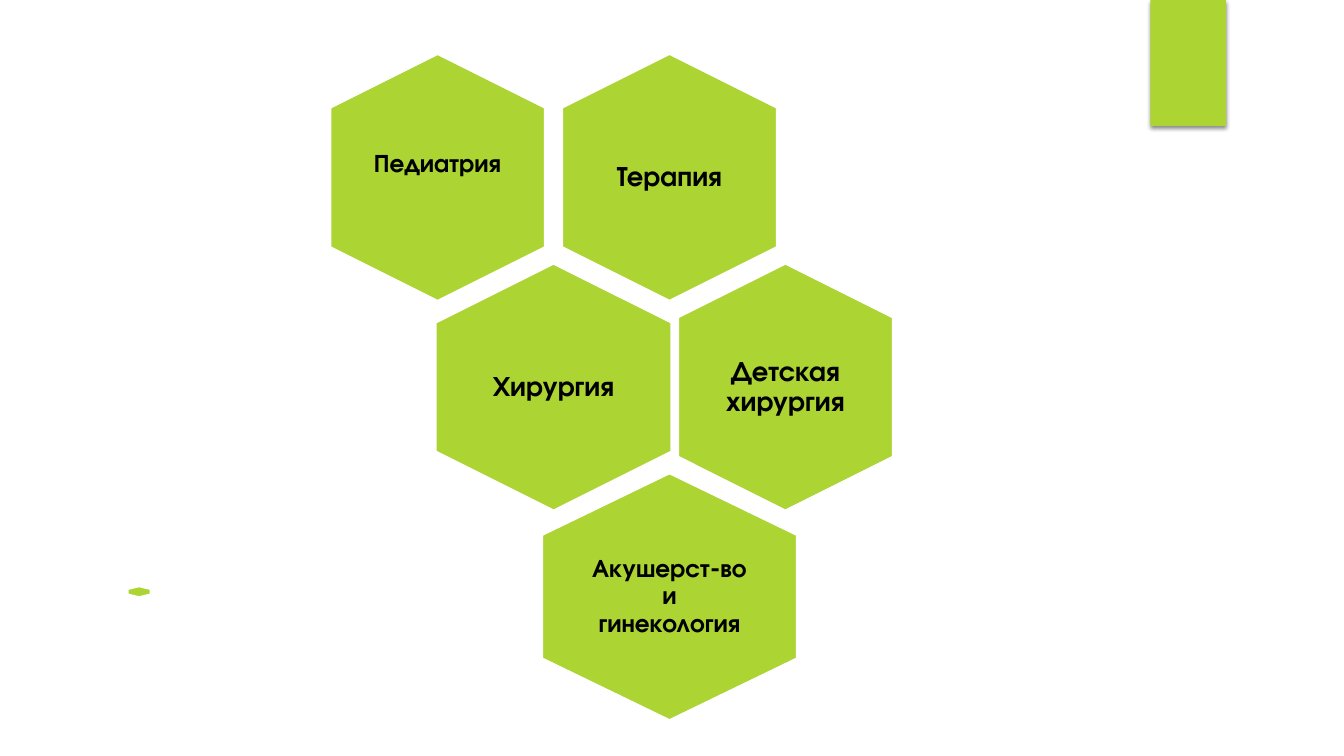
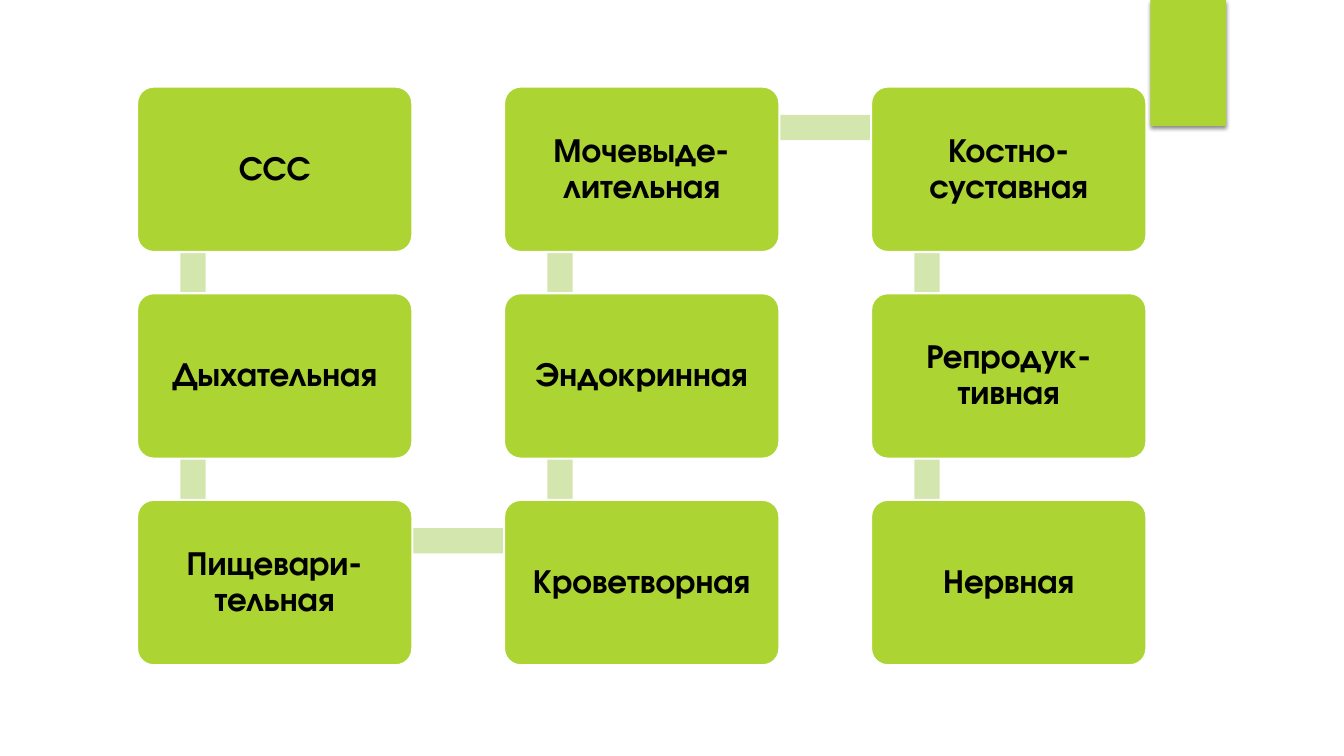
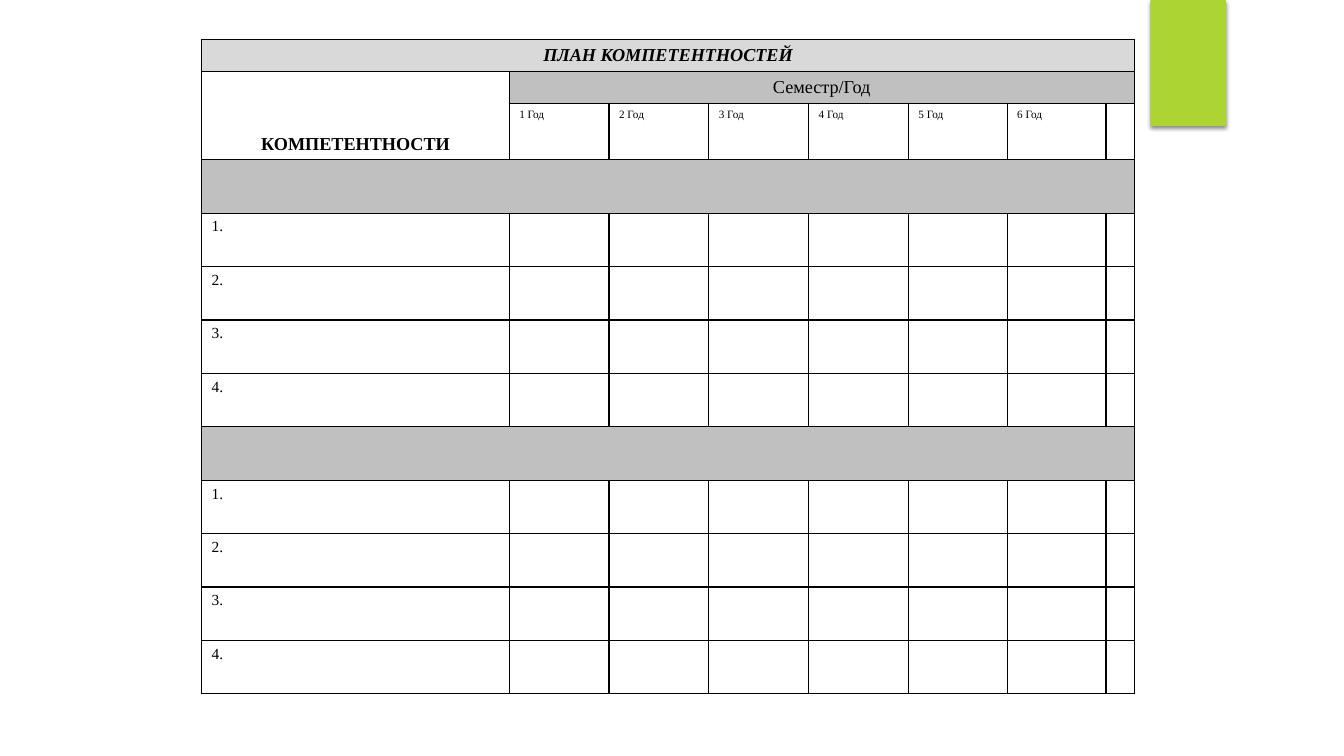
from lxml import etree
from pptx import Presentation
from pptx.dml.color import RGBColor as RGB
from pptx.enum.shapes import MSO_SHAPE as SHAPE
from pptx.enum.text import MSO_ANCHOR as ANCHOR, PP_ALIGN as ALIGN
from pptx.oxml import parse_xml
from pptx.oxml.ns import nsdecls, qn
from pptx.util import Inches, Pt

# Colours and fonts
LIME, PALE = RGB(0xAC, 0xD4, 0x33), RGB(0xD2, 0xE6, 0xAE)
WHITE, BLACK = RGB(255, 255, 255), RGB(0, 0, 0)
LIGHT, GREY = RGB(0xD9, 0xD9, 0xD9), RGB(0xC0, 0xC0, 0xC0)
SANS, SERIF = "TeX Gyre Adventor", "Times New Roman"

# Hexagons: text, half-steps across, row, breadth, size, inset, text box, lift
HEXES = [
    ("Терапия", 2, 0, 2.13, 20, 0.08, (1.47, 1.69), 0),
    ("Педиатрия", 0, 0, 2.13, 18, 0, (1.47, 1.69), 0.13),
    ("Хирургия", 1, 1, 2.34, 20, 0.08, (1.58, 1.65), 0),
    ("Детская хирургия", 3, 1, 2.13, 20, 0, (1.47, 1.69), 0),
    ("Акушерст-во и гинекология", 2, 2, 2.53, 18, 0.07, (1.69, 1.63), 0),
]

# Body systems, in the order of the chain
CHAIN = ["ССС", "Дыхательная", "Пищевари-тельная",
         "Кроветворная", "Эндокринная", "Мочевыде-лительная",
         "Костно-суставная", "Репродук-тивная", "Нервная"]

# Table
COLS = [3.05] + [0.99] * 4 + [0.98] * 2 + [0.28]
ROWS = [0.3, 0.3, 0.56] + [0.53] * 10
SPANS = [(0, 0, 0, 7), (1, 0, 2, 0), (1, 1, 1, 7), (3, 0, 3, 7), (8, 0, 8, 7)]
FILLS = {0: LIGHT, 3: GREY, 8: GREY}
HEADS = [
    (0, 0, "ПЛАН КОМПЕТЕНТНОСТЕЙ", ANCHOR.MIDDLE, {"bold": True, "italic": True}),
    (1, 0, "КОМПЕТЕНТНОСТИ", ANCHOR.BOTTOM, {"bold": True}),
    (1, 1, "Семестр/Год", ANCHOR.MIDDLE, {}),
]
YEARS, ITEMS, BLOCKS = 6, 4, (4, 9)


def style(par, name, size, align=ALIGN.CENTER, **extra):
    par.alignment = align
    font = par.runs[0].font
    font.color.rgb = BLACK
    for key, val in {"name": name, "size": Pt(size), **extra}.items():
        setattr(font, key, val)


def write(shape, text, size, inset):
    frame = shape.text_frame
    frame.word_wrap = True
    frame.vertical_anchor = ANCHOR.MIDDLE
    for side in ("left", "top", "right", "bottom"):
        setattr(frame, f"margin_{side}", Inches(inset))
    frame.text = text
    par = frame.paragraphs[0]
    par.line_spacing = 0.9
    style(par, SANS, size, bold=True)


def draw(slide, kind, x, y, w, h, fill=LIME, edge=None):
    shape = slide.shapes.add_shape(kind, *map(Inches, (x, y, w, h)))
    shape.shadow.inherit = False
    shape.fill.solid()
    shape.fill.fore_color.rgb = fill
    if edge is None:
        shape.line.fill.background()
    else:
        shape.line.color.rgb = edge
        shape.line.width = Pt(1.5)
    return shape


def add_tab(slide, layout):
    """Put the green tab on the layout, so every slide shows it."""
    tab = draw(slide, SHAPE.RECTANGLE, 11.41, 0, 0.75, 1.25)
    glow = tab.element.spPr.find(qn("a:effectLst"))
    glow.append(parse_xml(
        f'<a:outerShdw {nsdecls("a")} blurRad="{Pt(3)}" dist="{Pt(2)}" '
        'dir="5400000" rotWithShape="0"><a:srgbClr val="000000">'
        '<a:alpha val="45000"/></a:srgbClr></a:outerShdw>'))
    layout.shapes.element.append(tab.element)


def add_hex(slide, x, y, w, h, turn=90):
    cell = draw(slide, SHAPE.HEXAGON, x - w / 2, y - h / 2, w, h, edge=WHITE)
    cell.adjustments[0] = 0.25
    cell.rotation = turn


def hex_slide(slide):
    for text, half, row, wide, size, inset, (w, h), lift in HEXES:
        x, y = 4.34 + 1.15 * half, 1.76 + 2.08 * row
        add_hex(slide, x, y, 2.45, wide)
        box = slide.shapes.add_textbox(
            *map(Inches, (x - w / 2, y - h / 2 - lift, w, h)))
        write(box, text, size, inset)
    add_hex(slide, 1.38, 5.87, 0.11, 0.23, 270)


def chain_slide(slide):
    # Down one column, up the next
    spots = []
    for col in range(3):
        rows = range(3) if col % 2 == 0 else reversed(range(3))
        spots += [(1.36 + 3.64 * col, 0.86 + 2.05 * row) for row in rows]
    # Links lie behind the boxes
    for (x, y), (to_x, to_y) in zip(spots, spots[1:]):
        if x == to_x:
            area = x + 0.43, min(y, to_y) + 0.41, 0.25, 2.04
        else:
            area = x + 0.56, y + 0.28, 3.63, 0.25
        draw(slide, SHAPE.RECTANGLE, *area, fill=PALE)
    for text, (x, y) in zip(CHAIN, spots):
        box = draw(slide, SHAPE.ROUNDED_RECTANGLE, x, y, 2.73, 1.64, edge=WHITE)
        box.adjustments[0] = 0.1
        write(box, text, 24, 0.1)


def add_edges(cell):
    props = cell._tc.get_or_add_tcPr()
    for side in "LRTB":
        line = etree.SubElement(props, qn(f"a:ln{side}"), w=str(Pt(1)))
        fill = etree.SubElement(line, qn("a:solidFill"))
        etree.SubElement(fill, qn("a:srgbClr"), val=str(BLACK))


def plan_slide(slide):
    table = slide.shapes.add_table(
        len(ROWS), len(COLS), Inches(2), Inches(0.39),
        Inches(sum(COLS)), Inches(sum(ROWS))).table
    table.first_row = table.horz_banding = False
    for col, w in zip(table.columns, COLS):
        col.width = Inches(w)
    for row, h in zip(table.rows, ROWS):
        row.height = Inches(h)
    # Grid and fills
    for r in range(len(ROWS)):
        for c in range(len(COLS)):
            cell = table.cell(r, c)
            add_edges(cell)
            cell.fill.solid()
            cell.fill.fore_color.rgb = FILLS.get(r, GREY if r == 1 and c else WHITE)
    for top, left, low, right in SPANS:
        table.cell(top, left).merge(table.cell(low, right))
    # Headings, years and numbered rows
    for r, c, text, anchor, extra in HEADS:
        cell = table.cell(r, c)
        cell.text = text
        cell.vertical_anchor = anchor
        style(cell.text_frame.paragraphs[0], SERIF, 13, **extra)
    marks = [(2, n, f"{n} Год", 8) for n in range(1, YEARS + 1)]
    marks += [(top + n, 0, f"{n + 1}.", 11) for top in BLOCKS for n in range(ITEMS)]
    for r, c, text, size in marks:
        cell = table.cell(r, c)
        cell.text = text
        style(cell.text_frame.paragraphs[0], SERIF, size, ALIGN.LEFT)


def main():
    deck = Presentation()
    deck.slide_width, deck.slide_height = Inches(13.33), Inches(7.5)
    blank = deck.slide_layouts[6]
    for num, build in enumerate((hex_slide, chain_slide, plan_slide)):
        slide = deck.slides.add_slide(blank)
        if num == 0:
            add_tab(slide, blank)
        build(slide)
    deck.save("out.pptx")


if __name__ == "__main__":
    main()
